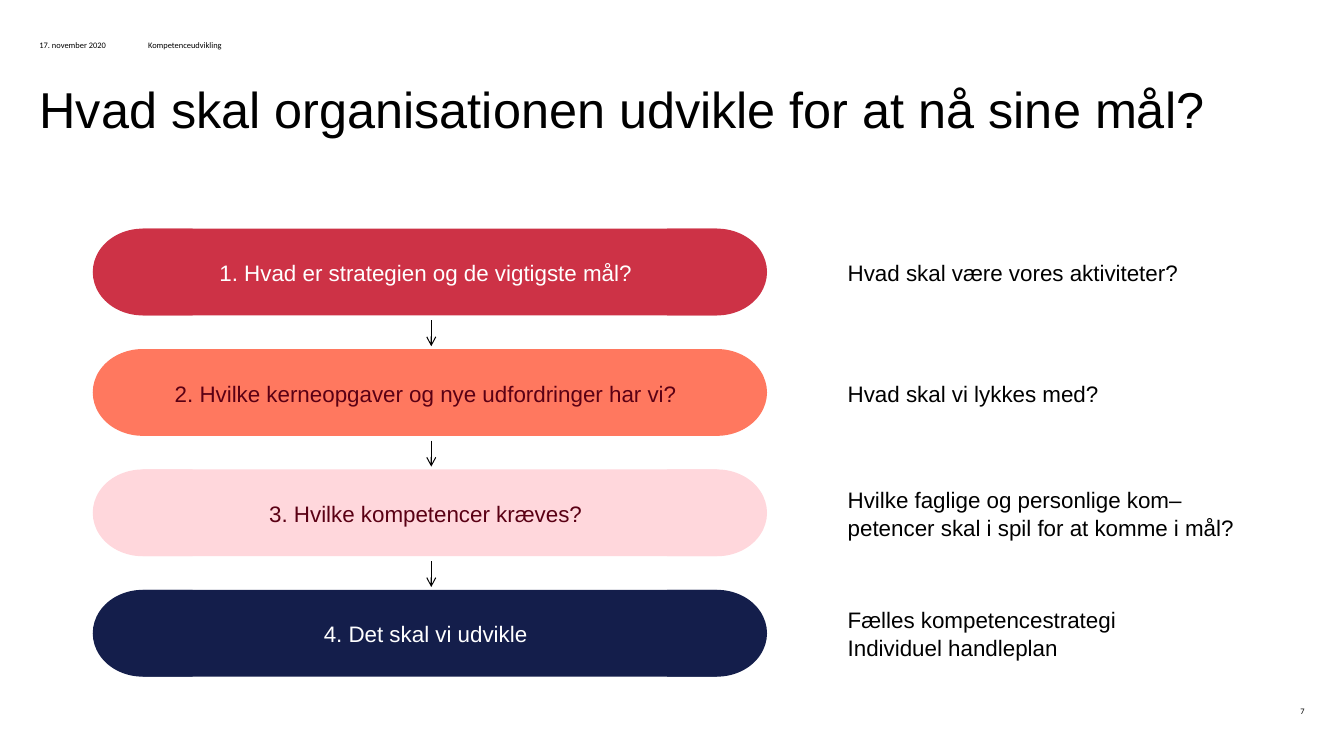
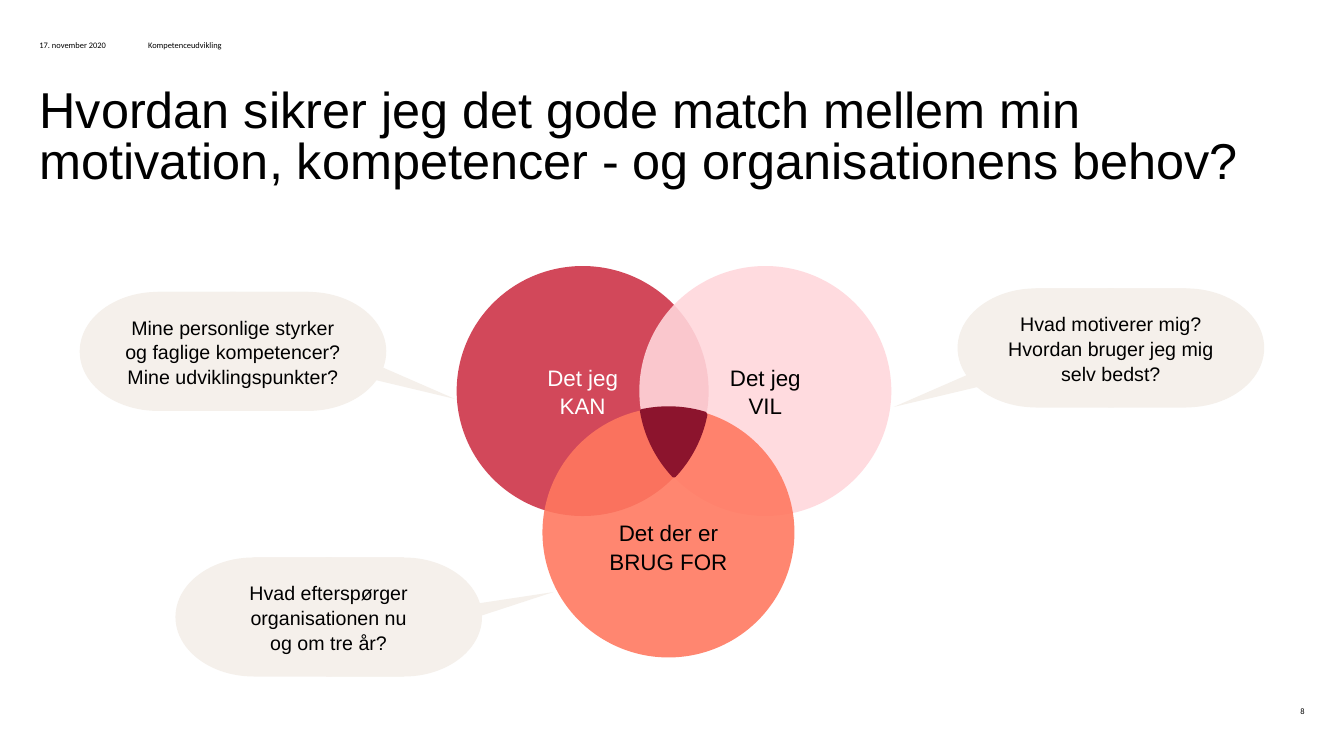
from math import atan2, cos, radians, sin

from lxml import etree
from pptx import Presentation
from pptx.dml.color import RGBColor
from pptx.enum.shapes import MSO_CONNECTOR, MSO_SHAPE
from pptx.enum.text import MSO_ANCHOR, MSO_AUTO_SIZE, PP_ALIGN
from pptx.oxml.ns import qn
from pptx.util import Pt

BLACK = RGBColor(0x00, 0x00, 0x00)
WHITE = RGBColor(0xFF, 0xFF, 0xFF)
RED = RGBColor(0xCD, 0x32, 0x46)
CORAL = RGBColor(0xFF, 0x78, 0x5F)
PINK = RGBColor(0xFF, 0xD7, 0xDC)
NAVY = RGBColor(0x14, 0x1E, 0x4B)
SAND = RGBColor(0xF5, 0xF0, 0xEB)
WINE = RGBColor(0x5A, 0x00, 0x14)
BURGUNDY = RGBColor(0x8C, 0x14, 0x2D)

SLIDE_W, SLIDE_H = 960, 540
MARGIN = 28.2
CIRCLE_W, CIRCLE_H = 180, 178.6


def write(tf, text, size=16, color=BLACK, align=PP_ALIGN.CENTER,
          anchor=MSO_ANCHOR.MIDDLE, font="Arial", spacing=1.05):
    """Fill a text frame; each line of text becomes a paragraph."""
    tf.auto_size = MSO_AUTO_SIZE.NONE
    tf.word_wrap = True
    tf.vertical_anchor = anchor
    tf.margin_left = tf.margin_right = tf.margin_top = tf.margin_bottom = 0
    for i, line in enumerate(text.split("\n")):
        p = tf.add_paragraph() if i else tf.paragraphs[0]
        p.alignment = align
        p.line_spacing = spacing
        r = p.add_run()
        r.text = line
        r.font.name = font
        r.font.size = Pt(size)
        r.font.color.rgb = color


def add_text(s, x, y, w, h, text, **style):
    sp = s.shapes.add_textbox(Pt(x), Pt(y), Pt(w), Pt(h))
    write(sp.text_frame, text, **style)


def add_filled(shapes, kind, x, y, w, h, color):
    sp = shapes.add_shape(kind, Pt(x), Pt(y), Pt(w), Pt(h))
    sp.shadow.inherit = False
    sp.fill.solid()
    sp.fill.fore_color.rgb = color
    sp.line.fill.background()
    return sp


def add_pill(shapes, x, y, w, h, cap, color):
    """Draw two rounded caps joined by a rectangle, which is returned."""
    left = add_filled(shapes, MSO_SHAPE.FLOWCHART_DELAY, x, y, cap, h, color)
    left.rotation = 180
    add_filled(shapes, MSO_SHAPE.FLOWCHART_DELAY, x + w - cap, y, cap, h, color)
    return add_filled(shapes, MSO_SHAPE.RECTANGLE, x + cap / 2, y, w - cap, h, color)


def add_arrow(s, x, y, length):
    c = s.shapes.add_connector(MSO_CONNECTOR.STRAIGHT, Pt(x), Pt(y), Pt(x), Pt(y + length))
    c.line.color.rgb = BLACK
    c.line.width = Pt(0.75)
    etree.SubElement(c.line._get_or_add_ln(), qn("a:tailEnd"), type="arrow")
    etree.SubElement(c._element.spPr, qn("a:effectLst"))


def add_slide(prs, title, number):
    s = prs.slides.add_slide(prs.slide_layouts[5])
    sp = s.shapes.title
    sp.left, sp.top, sp.width, sp.height = Pt(MARGIN), Pt(63.4), Pt(903.6), Pt(100.8)
    write(sp.text_frame, title, size=36, align=PP_ALIGN.LEFT,
          anchor=MSO_ANCHOR.TOP, spacing=0.83)
    for x, y, w, text, align in (
        (MARGIN, 28, 77.6, "17. november 2020", PP_ALIGN.LEFT),
        (105.8, 28, 126.7, "Kompetenceudvikling", PP_ALIGN.LEFT),
        (904.4, 503.3, 27.4, str(number), PP_ALIGN.RIGHT),
    ):
        add_text(s, x, y, w, 8.6, text, size=6, align=align, font="Calibri", spacing=1)
    return s


def add_steps(s, x, y, w, steps):
    """Stack the steps as pills with arrows between and an answer beside each."""
    h, pitch = 62, 86
    for i, (question, answer, fill, color) in enumerate(steps):
        top = y + i * pitch
        group = s.shapes.add_group_shape()
        tf = add_pill(group.shapes, x, top, w, h, 71.3, fill).text_frame
        write(tf, question, color=color)
        tf.margin_right = Pt(6)
        add_text(s, x + 539.3, top, 326, h, answer, align=PP_ALIGN.LEFT)
        if i < len(steps) - 1:
            add_arrow(s, x + w / 2 + 1, top + h + 3.5, 18.5)


def add_circle(s, x, y, text, fill, color, drop):
    sp = add_filled(s.shapes, MSO_SHAPE.OVAL, x, y, CIRCLE_W, CIRCLE_H, fill)
    clr = sp._element.spPr.find(qn("a:solidFill"))[0]
    etree.SubElement(clr, qn("a:alpha"), val="89000")
    write(sp.text_frame, text, color=color)
    sp.text_frame.margin_top = Pt(drop)


def common_outline(centres):
    """Return the outline of the area that all the circles share."""
    rx, ry = CIRCLE_W / 2, CIRCLE_H / 2
    rim = [(cx + rx * cos(radians(a)), cy + ry * sin(radians(a)))
           for cx, cy in centres for a in range(360)]
    points = [(x, y) for x, y in rim
              if all(((x - cx) / rx) ** 2 + ((y - cy) / ry) ** 2 <= 1.0001
                     for cx, cy in centres)]
    mx = sum(x for x, _ in points) / len(points)
    my = sum(y for _, y in points) / len(points)
    return sorted(points, key=lambda p: atan2(p[1] - my, p[0] - mx))


def add_venn(s, x, y):
    circles = (
        (x, y, "Det jeg\nKAN", RED, WHITE, 0),
        (x + 130.5, y, "Det jeg\nVIL", PINK, BLACK, 0),
        (x + 61.3, y + 101, "Det der er\nBRUG FOR", CORAL, BLACK, 20),
    )
    for circle in circles:
        add_circle(s, *circle)
    centres = [(c[0] + CIRCLE_W / 2, c[1] + CIRCLE_H / 2) for c in circles]
    outline = [(Pt(px), Pt(py)) for px, py in common_outline(centres)]
    builder = s.shapes.build_freeform(*outline[0])
    builder.add_line_segments(outline[1:], close=True)
    core = builder.convert_to_shape()
    core.shadow.inherit = False
    core.fill.solid()
    core.fill.fore_color.rgb = BURGUNDY
    core.line.color.rgb = BURGUNDY
    core.line.width = Pt(1.5)


def add_bubble(s, x, y, text, tail_at, tail_to):
    """Draw a speech bubble; tail_at is the offset of its tail, tail_to the tip."""
    w, h, text_w = 219, 85, 164
    group = s.shapes.add_group_shape()
    add_pill(group.shapes, x, y, w, h, 111.6, SAND)
    tail = add_filled(group.shapes, MSO_SHAPE.OVAL_CALLOUT,
                      x + tail_at[0], y + tail_at[1], 111.6, 50.4, SAND)
    tail.adjustments[0], tail.adjustments[1] = tail_to
    add_text(s, x + (w - text_w) / 2, y, text_w, h, text, size=14)


def build_strategy(prs):
    s = add_slide(prs, "Hvad skal organisationen udvikle for at nå sine mål?", 7)
    add_steps(s, 66.2, 163.3, 481.7, (
        ("1. Hvad er strategien og de vigtigste mål?",
         "Hvad skal være vores aktiviteter?", RED, WHITE),
        ("2. Hvilke kerneopgaver og nye udfordringer har vi?",
         "Hvad skal vi lykkes med?", CORAL, WINE),
        ("3. Hvilke kompetencer kræves?",
         "Hvilke faglige og personlige kom–\npetencer skal i spil for at komme i mål?",
         PINK, WINE),
        ("4. Det skal vi udvikle",
         "Fælles kompetencestrategi\nIndividuel handleplan", NAVY, WHITE),
    ))


def build_match(prs):
    s = add_slide(prs, "Hvordan sikrer jeg det gode match mellem min motivation, "
                       "kompetencer - og organisationens behov?", 8)
    add_venn(s, 326.2, 190)
    for bubble in (
        (684, 206, "Hvad motiverer mig?\nHvordan bruger jeg mig selv bedst?",
         (3.6, 25.2), (-0.94, 0.68)),
        (125.3, 398.2, "Hvad efterspørger\norganisationen nu\nog om tre år?",
         (103.7, 25.2), (0.99, -0.51)),
        (56.9, 208.5, "Mine personlige styrker\nog faglige kompetencer?\n"
                      "Mine udviklingspunkter?", (107.3, 17), (0.94, 0.68)),
    ):
        add_bubble(s, *bubble)


def main():
    prs = Presentation()
    prs.slide_width, prs.slide_height = Pt(SLIDE_W), Pt(SLIDE_H)
    build_strategy(prs)
    build_match(prs)
    prs.save("out.pptx")


if __name__ == "__main__":
    main()
